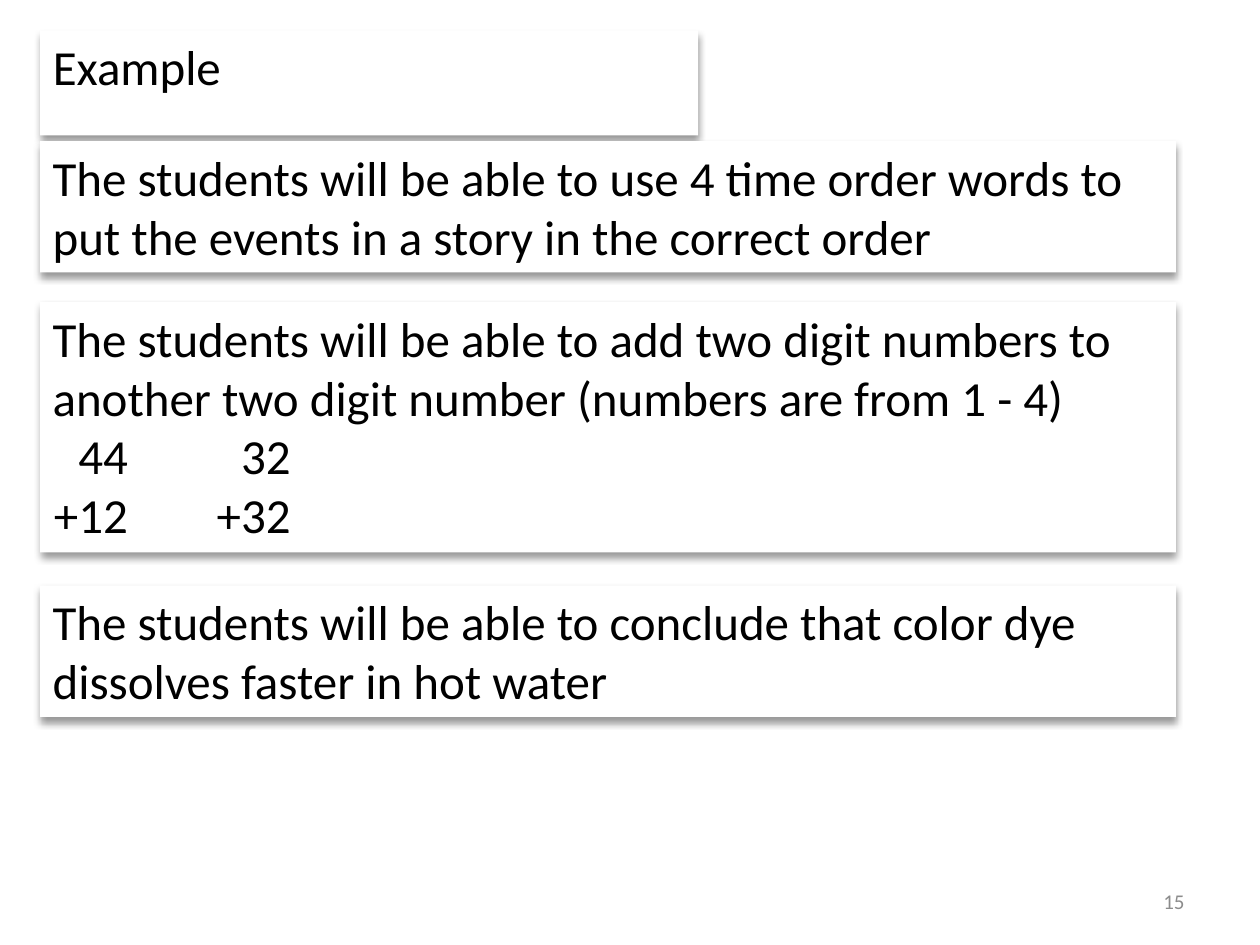
from dataclasses import dataclass

from lxml import etree
from pptx import Presentation
from pptx import util as u
from pptx.dml.color import RGBColor
from pptx.enum import shapes, text
from pptx.oxml.ns import qn


@dataclass(frozen=True)
class Theme:
    font: str = "Calibri"
    ink: str = "000000"
    paper: str = "FFFFFF"
    gray: str = "8C8C8C"
    body: int = 28
    small: int = 12


def write(frame, lines, theme, size, color, align=text.PP_ALIGN.LEFT,
          anchor=text.MSO_ANCHOR.TOP, tabs=()):
    frame.word_wrap = True
    frame.vertical_anchor = anchor
    frame.margin_left = frame.margin_right = u.Pt(7.2)
    frame.margin_top = frame.margin_bottom = u.Pt(3.6)
    for i, line in enumerate(lines):
        para = frame.paragraphs[0] if i == 0 else frame.add_paragraph()
        para.text = line
        para.alignment = align
        if "\t" in line:
            stops = etree.SubElement(para._p.get_or_add_pPr(), qn("a:tabLst"))
            for pos in tabs:
                etree.SubElement(stops, qn("a:tab"), pos=str(u.Pt(pos)), algn="r")
        font = para.font
        for item in (font, *(run.font for run in para.runs)):
            item.name = theme.font
            item.size = u.Pt(size)
            item.color.rgb = RGBColor.from_string(color)


class Deck:
    def __init__(self, slide, theme):
        self.slide = slide
        self.theme = theme

    def shade(self, shape):
        shape.shadow.inherit = False
        effects = shape._element.spPr.find(qn("a:effectLst"))
        outer = etree.SubElement(
            effects, qn("a:outerShdw"), blurRad=str(u.Pt(4)),
            dist=str(u.Pt(3)), dir="5400000", rotWithShape="0")
        color = etree.SubElement(outer, qn("a:srgbClr"), val=self.theme.ink)
        etree.SubElement(color, qn("a:alpha"), val="40000")

    def style(self, shape, lines, tabs=()):
        shape.fill.solid()
        shape.fill.fore_color.rgb = RGBColor.from_string(self.theme.paper)
        shape.line.fill.background()
        self.shade(shape)
        write(shape.text_frame, lines, self.theme, self.theme.body,
              self.theme.ink, tabs=tabs)
        shape.text_frame.auto_size = text.MSO_AUTO_SIZE.SHAPE_TO_FIT_TEXT

    def title(self, words, left, top, width, height):
        shape = self.slide.shapes.title
        shape.left, shape.top = u.Pt(left), u.Pt(top)
        shape.width, shape.height = u.Pt(width), u.Pt(height)
        self.style(shape, [words])

    def card(self, lines, left, top, width, height, tabs=()):
        shape = self.slide.shapes.add_shape(
            shapes.MSO_SHAPE.RECTANGLE,
            u.Pt(left), u.Pt(top), u.Pt(width), u.Pt(height))
        self.style(shape, lines, tabs)

    def number(self, words, left, top, width, height):
        box = self.slide.shapes.add_textbox(
            u.Pt(left), u.Pt(top), u.Pt(width), u.Pt(height))
        write(box.text_frame, [words], self.theme, self.theme.small,
              self.theme.gray, align=text.PP_ALIGN.RIGHT,
              anchor=text.MSO_ANCHOR.MIDDLE)


def main():
    show = Presentation()
    show.slide_width, show.slide_height = u.Pt(720), u.Pt(540)
    deck = Deck(show.slides.add_slide(show.slide_layouts[5]), Theme())

    left, width = 23, 649
    deck.title("Example", left, 17.4, 376, 41.2)
    deck.number("15", 516, 500.5, 168, 28.75)

    goals = [
        (80.6, 75.1, ["The students will be able to use 4 time order words to "
                      "put the events in a story in the correct order"]),
        (172.6, 143, ["The students will be able to add two digit numbers to "
                      "another two digit number (numbers are from 1 - 4)",
                      "\t44\t32", "\t+12\t+32"]),
        (334.6, 75.1, ["The students will be able to conclude that color dye "
                       "dissolves faster in hot water"]),
    ]
    for top, height, lines in goals:
        deck.card(lines, left, top, width, height, tabs=(43, 136))

    show.save("out.pptx")


if __name__ == "__main__":
    main()
